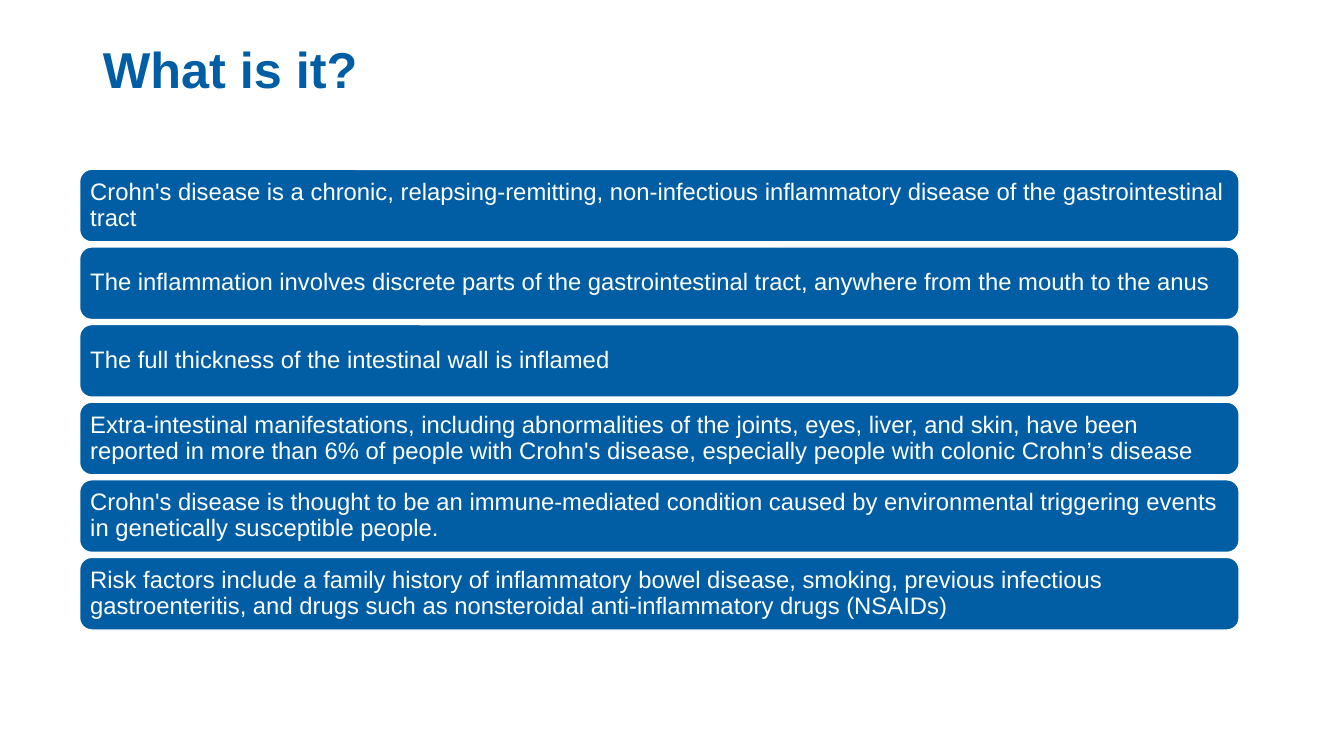
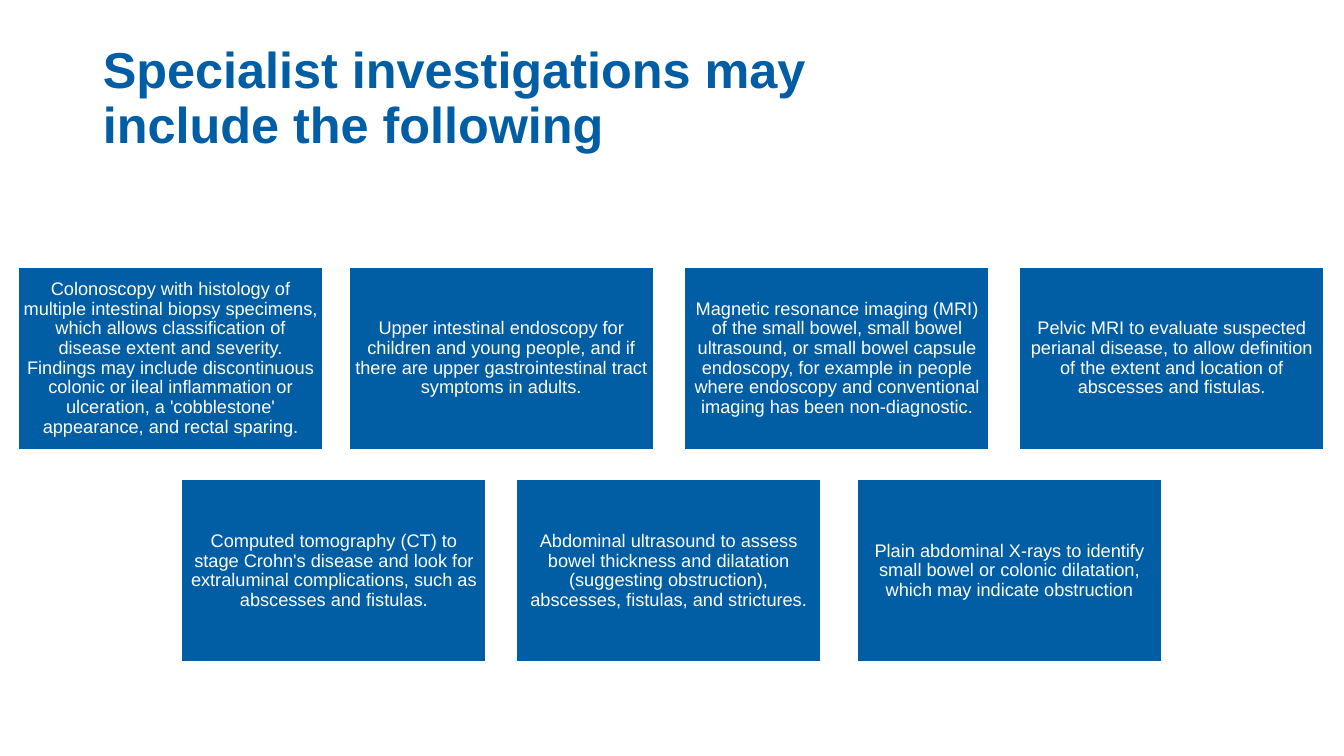
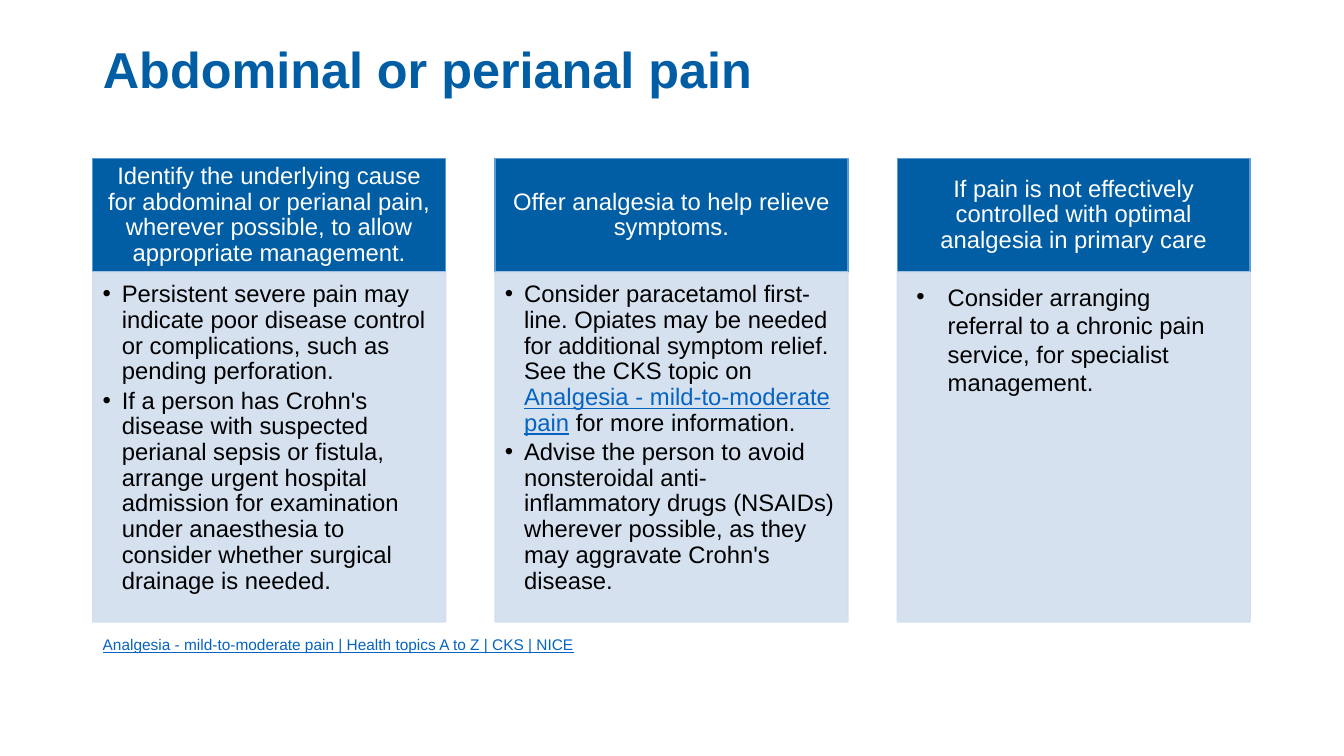
"""Build three slides on Crohn's disease: definition, investigations and pain."""
from pptx import Presentation
from pptx import util as u
from pptx.dml.color import RGBColor
from pptx.enum import shapes, text
from pptx.oxml.ns import qn
from lxml import etree

COLORS = {
    "blue": "015EA4",
    "edge": "5B9BD5",
    "pale": "D2DEEF",
    "link": "0563C1",
    "white": "FFFFFF",
    "black": "000000",
}
FONT = "Arial"
SHAPE = shapes.MSO_SHAPE
ALIGN = text.PP_ALIGN
ANCHOR = text.MSO_ANCHOR


def write(tf, words, size=17, color="white", bold=False, align=ALIGN.LEFT,
          spacing=0.9, after=0, indent=None, link=None):
    """Add one paragraph; an indent gives it a bullet, and link marks a part of it."""
    p = tf.paragraphs[0] if not tf.text else tf.add_paragraph()
    p.alignment = align
    p.line_spacing = spacing
    p.space_after = u.Pt(after)
    if indent:
        pPr = p._p.get_or_add_pPr()
        pPr.set("marL", str(u.Inches(indent)))
        pPr.set("indent", str(-u.Inches(indent)))
        etree.SubElement(pPr, qn("a:buFont")).set("typeface", FONT)
        etree.SubElement(pPr, qn("a:buChar")).set("char", "•")
    for part in words.partition(link) if link else [words]:
        if part:
            r = p.add_run()
            r.text = part
            r.font.name = FONT
            r.font.size = u.Pt(size)
            r.font.bold = bold
            r.font.underline = part == link
            r.font.color.rgb = RGBColor.from_string(COLORS["link" if part == link else color])


def box(s, kind, at, insets, fill="blue", line="white", anchor=ANCHOR.MIDDLE, alpha=None):
    """Add a filled shape and return its text frame."""
    sp = s.shapes.add_shape(kind, *map(u.Inches, at))
    sp.shadow.inherit = False
    sp.fill.solid()
    sp.fill.fore_color.rgb = RGBColor.from_string(COLORS[fill])
    sp.line.color.rgb = RGBColor.from_string(COLORS[line])
    sp.line.width = u.Pt(1)
    if alpha:
        for clr in sp._element.spPr.iter(qn("a:srgbClr")):
            etree.SubElement(clr, qn("a:alpha")).set("val", str(alpha * 1000))
    tf = sp.text_frame
    tf.word_wrap = True
    tf.vertical_anchor = anchor
    tf.margin_left, tf.margin_top, tf.margin_right, tf.margin_bottom = map(u.Inches, insets)
    return tf


prs = Presentation()
prs.slide_width = u.Inches(13.33)
prs.slide_height = u.Inches(7.5)

titles = [
    ("What is it?", 11.5),
    ("Specialist investigations may include the following", 8.89),
    ("Abdominal or perianal pain", 11.5),
]
slides = []
for title, width in titles:
    s = prs.slides.add_slide(prs.slide_layouts[5])
    sp = s.shapes.title
    sp.left, sp.top, sp.width, sp.height = map(u.Inches, (0.92, 0.4, width, 1.45))
    sp.text_frame.vertical_anchor = ANCHOR.TOP
    sp.text_frame.auto_size = text.MSO_AUTO_SIZE.NONE
    write(sp.text_frame, title, size=36, color="blue", bold=True)
    slides.append(s)
definition, investigations, pain = slides

facts = [
    "Crohn's disease is a chronic, relapsing-remitting, non-infectious inflammatory disease of the gastrointestinal tract",
    "The inflammation involves discrete parts of the gastrointestinal tract, anywhere from the mouth to the anus",
    "The full thickness of the intestinal wall is inflamed",
    "Extra-intestinal manifestations, including abnormalities of the joints, eyes, liver, and skin, have been reported in more than 6% of people with Crohn's disease, especially people with colonic Crohn’s disease",
    "Crohn's disease is thought to be an immune-mediated condition caused by environmental triggering events in genetically susceptible people.",
    "Risk factors include a family history of inflammatory bowel disease, smoking, previous infectious gastroenteritis, and drugs such as nonsteroidal anti-inflammatory drugs (NSAIDs)",
]
for i, fact in enumerate(facts):
    tf = box(definition, SHAPE.ROUNDED_RECTANGLE, (0.79, 1.68 + 0.77 * i, 11.5, 0.72), [0.07] * 4)
    write(tf, fact)

rows = [
    (2.65, [
        (0.18, "Colonoscopy with histology of multiple intestinal biopsy specimens, which allows classification of disease extent and severity. Findings may include discontinuous colonic or ileal inflammation or ulceration, a 'cobblestone' appearance, and rectal sparing."),
        (3.46, "Upper intestinal endoscopy for children and young people, and if there are upper gastrointestinal tract symptoms in adults."),
        (6.79, "Magnetic resonance imaging (MRI) of the small bowel, small bowel ultrasound, or small bowel capsule endoscopy, for example in people where endoscopy and conventional imaging has been non-diagnostic."),
        (10.11, "Pelvic MRI to evaluate suspected perianal disease, to allow definition of the extent and location of abscesses and fistulas."),
    ]),
    (4.76, [
        (1.8, "Computed tomography (CT) to stage Crohn's disease and look for extraluminal complications, such as abscesses and fistulas."),
        (5.12, "Abdominal ultrasound to assess bowel thickness and dilatation (suggesting obstruction), abscesses, fistulas, and strictures."),
        (8.5, "Plain abdominal X-rays to identify small bowel or colonic dilatation, which may indicate obstruction"),
    ]),
]
for top, tests in rows:
    for left, test in tests:
        tf = box(investigations, SHAPE.RECTANGLE, (left, top, 3.02, 1.81), [0.05] * 4)
        write(tf, test, size=13, align=ALIGN.CENTER)

topic = "Analgesia - mild-to-moderate pain"
listed = {"indent": 0.19, "after": 2.5, "link": topic}
referral = {"indent": 0.31, "spacing": 1.0}
columns = [
    ("Identify the underlying cause for abdominal or perianal pain, wherever possible, to allow appropriate management.",
     (0.1, 0.1, 0.13, 0.15), listed,
     ["Persistent severe pain may indicate poor disease control or complications, such as pending perforation.",
      "If a person has Crohn's disease with suspected perianal sepsis or fistula, arrange urgent hospital admission for examination under anaesthesia to consider whether surgical drainage is needed."]),
    ("Offer analgesia to help relieve symptoms.",
     (0.1, 0.1, 0.13, 0.15), listed,
     [f"Consider paracetamol first-line. Opiates may be needed for additional symptom relief. See the CKS topic on {topic} for more information.",
      "Advise the person to avoid nonsteroidal anti-inflammatory drugs (NSAIDs) wherever possible, as they may aggravate Crohn's disease."]),
    ("If pain is not effectively controlled with optimal analgesia in primary care",
     (0.19, 0.1, 0.38, 0.15), referral,
     ["Consider arranging referral to a chronic pain service, for specialist management."]),
]
for i, (heading, insets, style, points) in enumerate(columns):
    left = 0.92 + 3.99 * i
    tf = box(pain, SHAPE.RECTANGLE, (left, 1.57, 3.5, 1.13), (0.13, 0.08, 0.13, 0.08), line="edge")
    write(tf, heading, align=ALIGN.CENTER)
    tf = box(pain, SHAPE.RECTANGLE, (left, 2.7, 3.5, 3.47), insets,
             fill="pale", line="pale", anchor=ANCHOR.TOP, alpha=90)
    for point in points:
        write(tf, point, color="black", **style)

source = f"{topic} | Health topics A to Z | CKS | NICE"
tf = pain.shapes.add_textbox(*map(u.Inches, (0.92, 6.25, 6.67, 0.29))).text_frame
tf.word_wrap = True
write(tf, source, size=11, spacing=1.0, link=source)

prs.save("out.pptx")
